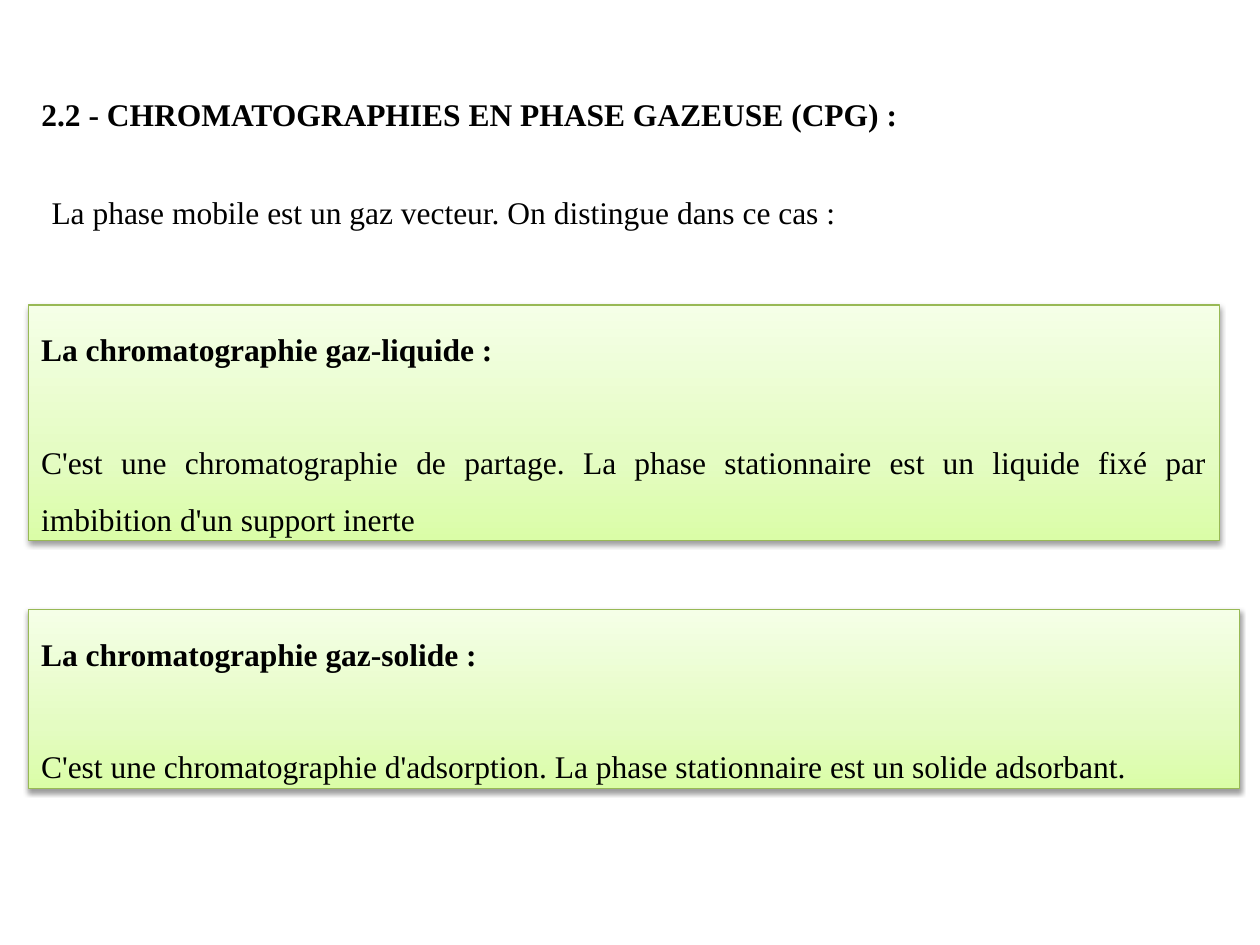
from dataclasses import dataclass

from lxml.etree import SubElement
from pptx import Presentation
from pptx.dml.color import RGBColor
from pptx.enum.shapes import MSO_SHAPE as Shape
from pptx.enum.text import MSO_ANCHOR as Anchor, MSO_AUTO_SIZE as AutoSize, PP_ALIGN as Align
from pptx.oxml.ns import qn
from pptx.util import Cm, Pt


@dataclass(frozen=True)
class Theme:
    font: str = "Times New Roman"
    size: int = 18
    text: str = "000000"
    border: str = "98B955"
    border_width: float = 0.75
    shadow: str = "000000"
    # position in percent and colour, from the bottom of a card to its top
    gradient: tuple = ((0, "DAFDA7"), (35, "E4FCC2"), (100, "F5FFE7"))


THEME = Theme()
TITLE = "2.2 - CHROMATOGRAPHIES EN PHASE GAZEUSE (CPG) :"
INTRO = "La phase mobile est un gaz vecteur. On distingue dans ce cas :"
# box in cm, heading, description, alignment
CARDS = [
    ((0.58, 6.15, 24, 4.75), "La chromatographie gaz-liquide :",
     "C'est une chromatographie de partage. La phase stationnaire est un liquide "
     "fixé par imbibition d'un support inerte", Align.JUSTIFY),
    ((0.58, 12.29, 24.41, 3.61), "La chromatographie gaz-solide :",
     "C'est une chromatographie d'adsorption. La phase stationnaire est un solide "
     "adsorbant.", Align.LEFT),
]


def write(paragraph, text, bold=False, align=Align.LEFT, spacing=1.0, before=0):
    paragraph.alignment = align
    paragraph.line_spacing = spacing
    paragraph.space_before = Pt(before)
    run = paragraph.add_run()
    run.text = text
    run.font.name = THEME.font
    run.font.size = Pt(THEME.size)
    run.font.bold = bold
    run.font.color.rgb = RGBColor.from_string(THEME.text)


def prepare_frame(shape, wrap=True):
    frame = shape.text_frame
    frame.word_wrap = wrap
    frame.auto_size = AutoSize.NONE
    frame.vertical_anchor = Anchor.TOP
    return frame


def add_color(parent, color, **attributes):
    element = SubElement(parent, qn("a:srgbClr"), val=color)
    for name, value in attributes.items():
        SubElement(element, qn(f"a:{name}"), val=str(value))


def fill_with_gradient(shape):
    shape.fill.gradient()
    shape.fill.gradient_angle = 90
    stops = shape.element.spPr.find(qn("a:gradFill")).find(qn("a:gsLst"))
    for stop in list(stops):
        stops.remove(stop)
    for percent, color in THEME.gradient:
        add_color(SubElement(stops, qn("a:gs"), pos=str(percent * 1000)), color)


def add_soft_shadow(shape):
    shape.shadow.inherit = False
    effects = shape.element.spPr.find(qn("a:effectLst"))
    shadow = SubElement(effects, qn("a:outerShdw"), blurRad="40000", dist="20000",
                        dir="5400000", rotWithShape="0")
    add_color(shadow, THEME.shadow, alpha=38000)


def place_title(slide, box):
    title = slide.shapes.title
    title.left, title.top, title.width, title.height = map(Cm, box)
    write(prepare_frame(title, wrap=False).paragraphs[0], TITLE, bold=True)


def add_intro(slide, box):
    shape = slide.shapes.add_textbox(*map(Cm, box))
    write(prepare_frame(shape).paragraphs[0], INTRO)


def add_card(slide, box, heading, description, align):
    shape = slide.shapes.add_shape(Shape.RECTANGLE, *map(Cm, box))
    fill_with_gradient(shape)
    shape.line.color.rgb = RGBColor.from_string(THEME.border)
    shape.line.width = Pt(THEME.border_width)
    add_soft_shadow(shape)
    frame = prepare_frame(shape)
    write(frame.paragraphs[0], heading, bold=True, align=align, spacing=1.5)
    write(frame.add_paragraph(), description, align=align, spacing=1.5, before=32)


def main():
    presentation = Presentation()
    presentation.slide_width, presentation.slide_height = Cm(25.4), Cm(19.05)
    slide = presentation.slides.add_slide(presentation.slide_layouts.get_by_name("Title Only"))
    place_title(slide, (0.58, 1.78, 17.86, 1.02))
    add_intro(slide, (0.79, 3.76, 19.46, 1.02))
    for card in CARDS:
        add_card(slide, *card)
    presentation.save("out.pptx")


if __name__ == "__main__":
    main()
